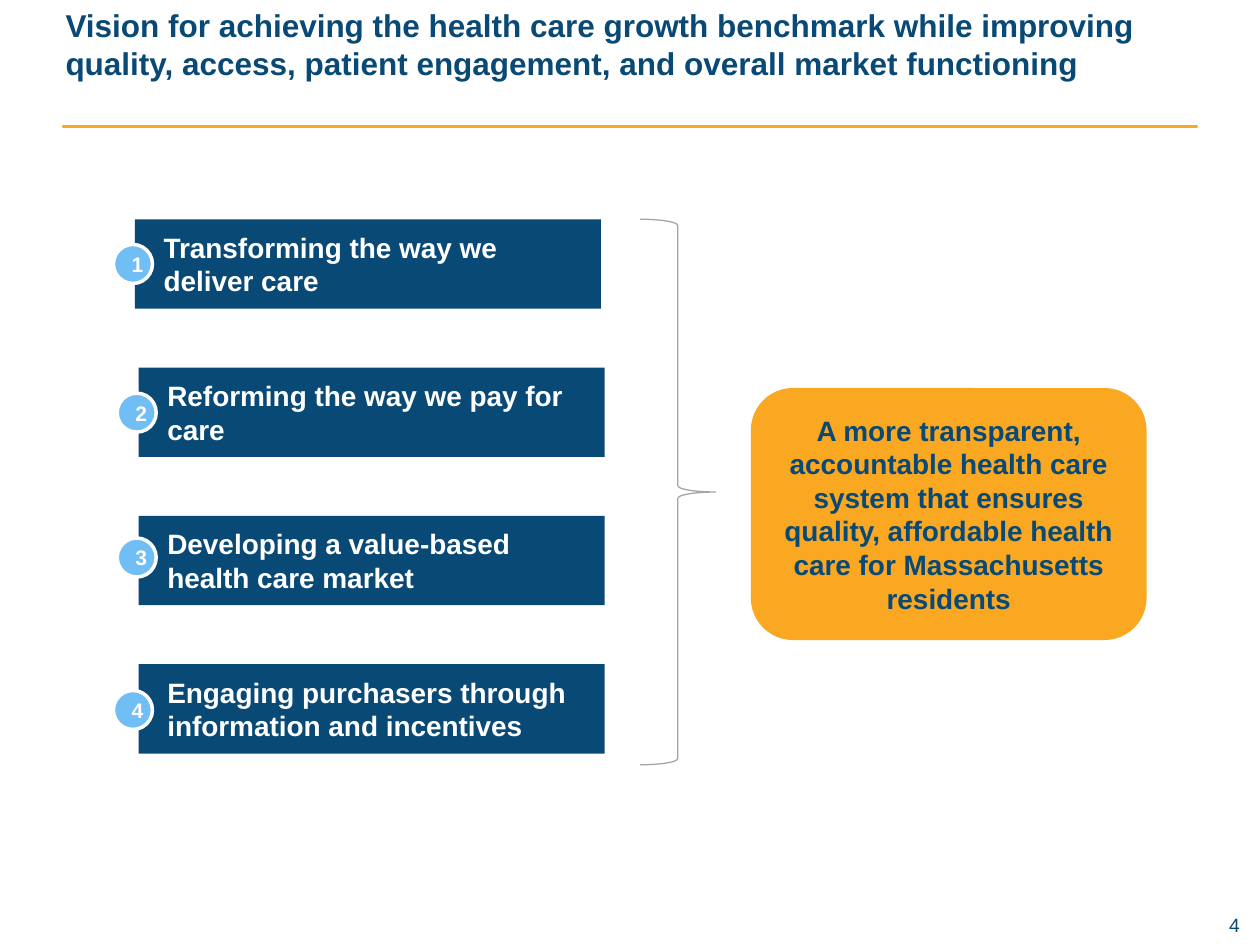
from pptx import Presentation
from pptx.dml.color import RGBColor
from pptx.enum import shapes, text
from pptx.util import Inches, Pt

NAVY = RGBColor(0x09, 0x49, 0x75)
ORANGE = RGBColor(0xFA, 0xA7, 0x21)
SKY = RGBColor(0x70, 0xBE, 0xF4)
GREY = RGBColor(0xA5, 0xA5, 0xA5)
WHITE = RGBColor(0xFF, 0xFF, 0xFF)
SHAPE = shapes.MSO_SHAPE
ALIGN = text.PP_ALIGN
ANCHOR = text.MSO_ANCHOR


def write(sp, words, size=16, color=WHITE, bold=True, align=ALIGN.LEFT,
          anchor=ANCHOR.MIDDLE):
    tf = sp.text_frame
    tf.word_wrap = True
    tf.auto_size = text.MSO_AUTO_SIZE.NONE
    tf.vertical_anchor = anchor
    p = tf.paragraphs[0]
    p.alignment = align
    r = p.add_run()
    r.text = words
    r.font.name, r.font.size, r.font.bold = "Arial", Pt(size), bold
    r.font.color.rgb = color
    return p


def add_shape(kind, x, y, w, h, fill=None, line=None, width=1):
    sp = slide.shapes.add_shape(kind, Inches(x), Inches(y), Inches(w), Inches(h))
    sp.shadow.inherit = False
    if fill is None:
        sp.fill.background()
    else:
        sp.fill.solid()
        sp.fill.fore_color.rgb = fill
    if line is None:
        sp.line.fill.background()
    else:
        sp.line.color.rgb = line
        sp.line.width = Pt(width)
    return sp


prs = Presentation()
prs.slide_width, prs.slide_height = Inches(10), Inches(7.5)
slide = prs.slides.add_slide(prs.slide_layouts[5])

# Title and rule
title = slide.shapes.title
title.left, title.top = Inches(0.42), Inches(0)
title.width, title.height = Inches(9.25), Inches(1.25)
write(title, "Vision for achieving the health care growth benchmark while improving "
      "quality, access, patient engagement, and overall market functioning",
      size=18, color=NAVY, anchor=ANCHOR.TOP)
add_shape(SHAPE.RECTANGLE, 0.5, 1, 9, 0.01, ORANGE, ORANGE)

# Numbered strategies: text, bar left, badge left, badge top
strategies = [
    ("Transforming the way we deliver care", 1.07, 0.9, 1.94),
    ("Reforming the way we pay for care", 1.1, 0.93, 3.12),
    ("Developing a value-based health care market", 1.1, 0.93, 4.27),
    ("Engaging purchasers through information and incentives", 1.1, 0.9, 5.48),
]
for i, (words, bar_x, badge_x, badge_y) in enumerate(strategies):
    bar = add_shape(SHAPE.RECTANGLE, bar_x, 1.74 + i * 1.177, 3.7, 0.71, NAVY)
    p = write(bar, words)
    p._p.get_or_add_pPr().set("marL", str(Inches(0.13)))
    badge = add_shape(SHAPE.OVAL, badge_x, badge_y, 0.31, 0.31, SKY, WHITE, 2)
    write(badge, str(i + 1), size=12, align=ALIGN.CENTER)

# Brace leading to the outcome
add_shape(SHAPE.RIGHT_BRACE, 5.08, 1.74, 0.6, 4.33, line=GREY, width=0.75)
outcome = add_shape(SHAPE.ROUNDED_RECTANGLE, 5.96, 3.08, 3.14, 2, ORANGE)
write(outcome, "A more transparent, accountable health care system that ensures "
      "quality, affordable health care for Massachusetts residents",
      color=NAVY, align=ALIGN.CENTER)

# Page number
number = slide.shapes.add_textbox(Inches(7.42), Inches(7.25), Inches(2.42), Inches(0.19))
tf = number.text_frame
tf.margin_left = tf.margin_right = tf.margin_top = tf.margin_bottom = 0
write(number, "4", size=11, color=NAVY, bold=False, align=ALIGN.RIGHT,
      anchor=ANCHOR.TOP)

prs.save("out.pptx")
